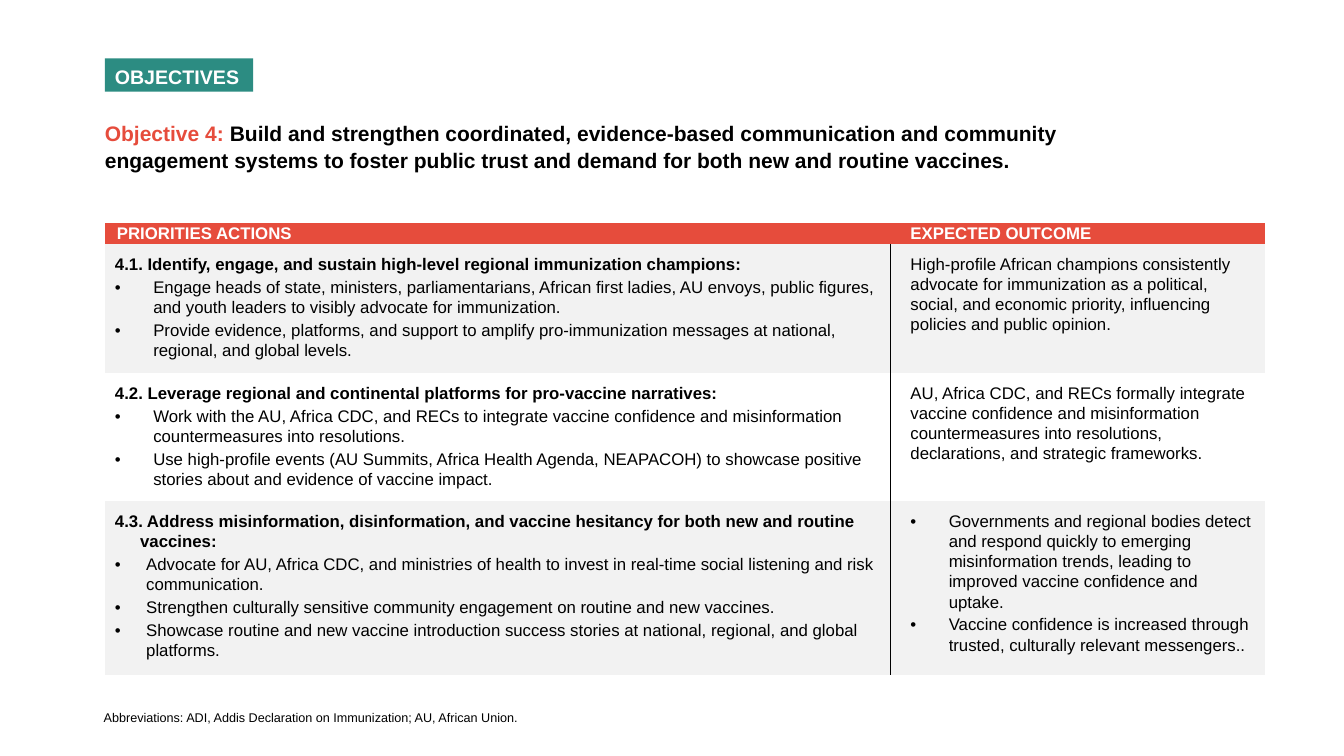
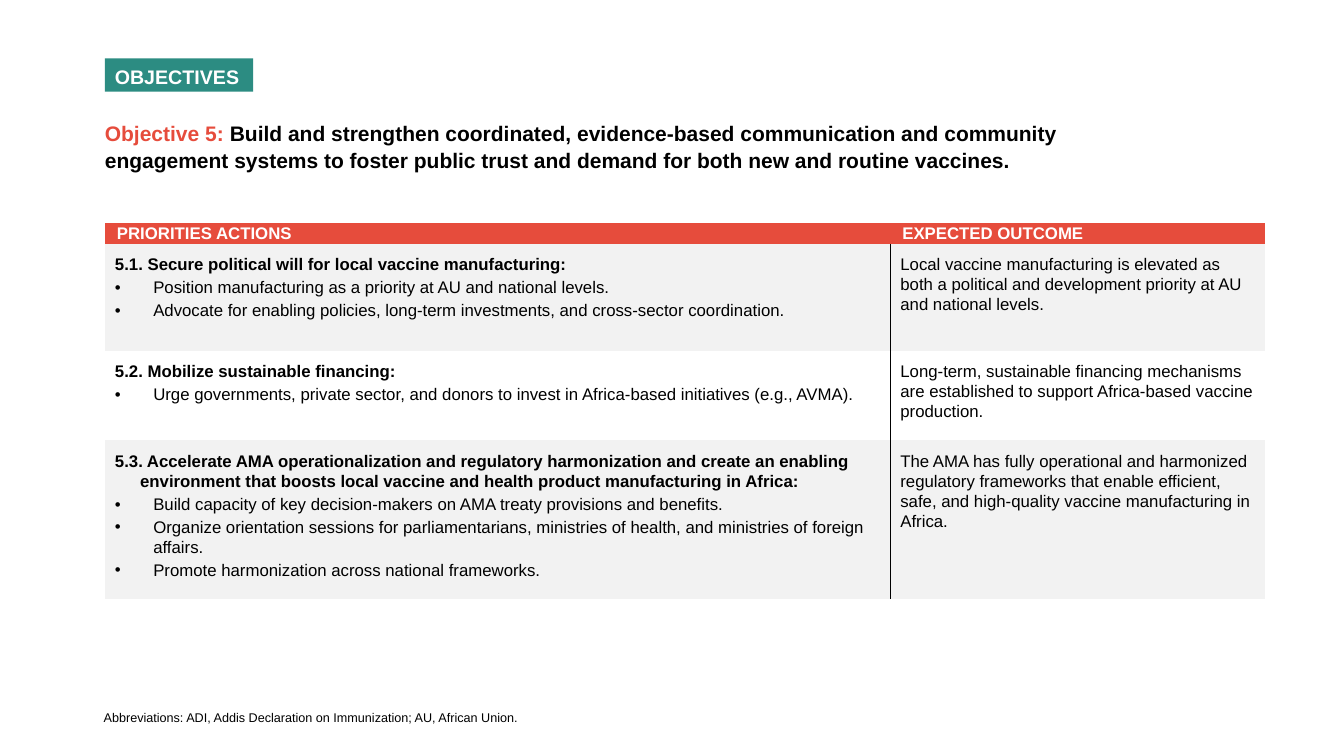
from dataclasses import dataclass

from lxml import etree
from pptx import Presentation
from pptx.dml.color import RGBColor
from pptx.enum.shapes import MSO_SHAPE
from pptx.enum.text import MSO_ANCHOR, MSO_AUTO_SIZE, PP_ALIGN
from pptx.oxml.ns import qn
from pptx.util import Inches, Pt

RECTANGLE = MSO_SHAPE.RECTANGLE
TOP = MSO_ANCHOR.TOP
MIDDLE = MSO_ANCHOR.MIDDLE
LEFT = PP_ALIGN.LEFT
NO_AUTOFIT = MSO_AUTO_SIZE.NONE

FONT = "Arial"
TEAL = "2C8C82"
RED = "E64C3C"
GREY = "F2F2F2"
WHITE = "FFFFFF"
BLACK = "000000"

MARGIN = 1.04
COLUMN_WIDTHS = (7.79, 3.72)
HEADER_HEIGHT = 0.21
LINE_SPACING = 1.07
HEADERS = ("PRIORITIES ACTIONS", "EXPECTED OUTCOME")
GOAL = (
    "Build and strengthen coordinated, evidence-based communication and community "
    "engagement systems to foster public trust and demand for both new and routine vaccines."
)
ABBREVIATIONS = "Abbreviations: ADI, Addis Declaration on Immunization; AU, African Union."


@dataclass
class Priority:
    height: float
    heading: str
    actions: list
    outcomes: list
    action_indent: float = 0.38


@dataclass
class Objective:
    label: str
    priorities: list
    header_inset: float
    outcome_inset: float


OBJECTIVES = [
    Objective(
        "Objective 4: ",
        [
            Priority(
                1.28,
                "4.1. Identify, engage, and sustain high-level regional immunization champions:",
                [
                    "Engage heads of state, ministers, parliamentarians, African first ladies, AU envoys, "
                    "public figures, and youth leaders to visibly advocate for immunization.",
                    "Provide evidence, platforms, and support to amplify pro-immunization messages "
                    "at national, regional, and global levels.",
                ],
                [
                    "High-profile African champions consistently advocate for immunization as a political, "
                    "social, and economic priority, influencing policies and public opinion.",
                ],
            ),
            Priority(
                1.27,
                "4.2. Leverage regional and continental platforms for pro-vaccine narratives:",
                [
                    "Work with the AU, Africa CDC, and RECs to integrate vaccine confidence and "
                    "misinformation countermeasures into resolutions.",
                    "Use high-profile events (AU Summits, Africa Health Agenda, NEAPACOH) to showcase "
                    "positive stories about and evidence of vaccine impact.",
                ],
                [
                    "AU, Africa CDC, and RECs formally integrate vaccine confidence and misinformation "
                    "countermeasures into resolutions, declarations, and strategic frameworks.",
                ],
            ),
            Priority(
                1.73,
                "4.3. Address misinformation, disinformation, and vaccine hesitancy for both new "
                "and routine vaccines:",
                [
                    "Advocate for AU, Africa CDC, and ministries of health to invest in real-time "
                    "social listening and risk communication.",
                    "Strengthen culturally sensitive community engagement on routine and new vaccines.",
                    "Showcase routine and new vaccine introduction success stories at national, "
                    "regional, and global platforms.",
                ],
                [
                    "Governments and regional bodies detect and respond quickly to emerging "
                    "misinformation trends, leading to improved vaccine confidence and uptake.",
                    "Vaccine confidence is increased through trusted, culturally relevant messengers..",
                ],
                action_indent=0.31,
            ),
        ],
        header_inset=0.2,
        outcome_inset=0.2,
    ),
    Objective(
        "Objective 5: ",
        [
            Priority(
                1.06,
                "5.1. Secure political will for local vaccine manufacturing:",
                [
                    "Position manufacturing as a priority at AU and national levels.",
                    "Advocate for enabling policies, long-term investments, and cross-sector coordination.",
                ],
                [
                    "Local vaccine manufacturing is elevated as both a political and development "
                    "priority at AU and national levels.",
                ],
            ),
            Priority(
                0.89,
                "5.2. Mobilize sustainable financing:",
                [
                    "Urge governments, private sector, and donors to invest in Africa-based "
                    "initiatives (e.g., AVMA).",
                ],
                [
                    "Long-term, sustainable financing mechanisms are established to support "
                    "Africa-based vaccine production.",
                ],
            ),
            Priority(
                1.57,
                "5.3. Accelerate AMA operationalization and regulatory harmonization and create an "
                "enabling environment that boosts local vaccine and health product manufacturing in Africa:",
                [
                    "Build capacity of key decision-makers on AMA treaty provisions and benefits.",
                    "Organize orientation sessions for parliamentarians, ministries of health, "
                    "and ministries of foreign affairs.",
                    "Promote harmonization across national frameworks.",
                ],
                [
                    "The AMA has fully operational and harmonized regulatory frameworks that enable "
                    "efficient, safe, and high-quality vaccine manufacturing in Africa.",
                ],
            ),
        ],
        header_inset=0.12,
        outcome_inset=0.1,
    ),
]


def rgb(color):
    return RGBColor.from_string(color)


def add_span(para, text, size, color, bold):
    span = para.add_run()
    span.text = text
    span.font.name = FONT
    span.font.size = Pt(size)
    span.font.bold = bold
    span.font.color.rgb = rgb(color)


def write_para(frame, text, size=12, color=BLACK, bold=False, lead="", lead_color=RED,
               hang=0, bullet=False, gap=0, spacing=LINE_SPACING):
    first = not frame.paragraphs[0].runs
    para = frame.paragraphs[0] if first else frame.add_paragraph()
    properties = para._p.get_or_add_pPr()
    if hang:
        properties.set("marL", str(Inches(hang)))
        properties.set("indent", str(-Inches(hang)))
    if bullet:
        etree.SubElement(properties, qn("a:buFont")).set("typeface", FONT)
        etree.SubElement(properties, qn("a:buChar")).set("char", "•")
    para.alignment = LEFT
    para.line_spacing = spacing
    para.space_before = Pt(0 if first else gap)
    para.space_after = Pt(gap)
    if lead:
        add_span(para, lead, size, lead_color, bold)
    add_span(para, text, size, color, bold)


def add_title(page, label):
    title = page.shapes.title
    title.left, title.top = Inches(MARGIN), Inches(1.13)
    title.width, title.height = Inches(10.5), Inches(0.62)
    frame = title.text_frame
    frame.word_wrap = True
    frame.auto_size = NO_AUTOFIT
    frame.vertical_anchor = TOP
    frame.margin_left = 0
    write_para(frame, GOAL, size=15, bold=True, lead=label)


def add_tag(page, text):
    tag = page.shapes.add_shape(RECTANGLE, Inches(MARGIN), Inches(0.58), Inches(1.47), Inches(0.33))
    tag.shadow.inherit = False
    tag.fill.solid()
    tag.fill.fore_color.rgb = rgb(TEAL)
    tag.line.fill.background()
    tag.text_frame.word_wrap = True
    tag.text_frame.vertical_anchor = TOP
    write_para(tag.text_frame, text, size=14, color=WHITE, bold=True)


def add_footnote(page, text):
    box = page.shapes.add_textbox(Inches(0.93), Inches(6.99), Inches(8.64), Inches(0.25))
    box.text_frame.word_wrap = True
    write_para(box.text_frame, text, size=9, spacing=1.0)


def set_borders(cell, ruled_side=None):
    properties = cell._tc.get_or_add_tcPr()
    for side in ("lnL", "lnR", "lnT", "lnB"):
        line = etree.SubElement(properties, qn(f"a:{side}"))
        if side == ruled_side:
            line.set("w", str(Pt(0.25)))
            fill = etree.SubElement(line, qn("a:solidFill"))
            etree.SubElement(fill, qn("a:srgbClr")).set("val", BLACK)
        else:
            etree.SubElement(line, qn("a:noFill"))


def style_cell(cell, fill, left, right=0.1, top=0.1, bottom=0.05, anchor=TOP, ruled_side=None):
    set_borders(cell, ruled_side)
    cell.fill.solid()
    cell.fill.fore_color.rgb = rgb(fill)
    cell.margin_left, cell.margin_right = Inches(left), Inches(right)
    cell.margin_top, cell.margin_bottom = Inches(top), Inches(bottom)
    cell.vertical_anchor = anchor


def fill_priority(table, row, priority, outcome_inset):
    table.rows[row].height = Inches(priority.height)
    shade = GREY if row % 2 else WHITE
    action_cell, outcome_cell = table.cell(row, 0), table.cell(row, 1)
    style_cell(action_cell, shade, 0.1, ruled_side="lnR")
    style_cell(outcome_cell, shade, outcome_inset, ruled_side="lnL")
    write_para(action_cell.text_frame, priority.heading, bold=True, hang=0.25, gap=1)
    for action in priority.actions:
        write_para(action_cell.text_frame, action, hang=priority.action_indent, bullet=True, gap=1)
    listed = len(priority.outcomes) > 1
    for outcome in priority.outcomes:
        write_para(outcome_cell.text_frame, outcome, hang=0.38 if listed else 0, bullet=listed, gap=1)


def add_priority_table(page, objective):
    priorities = objective.priorities
    height = HEADER_HEIGHT + sum(priority.height for priority in priorities)
    table = page.shapes.add_table(
        len(priorities) + 1, len(HEADERS),
        Inches(MARGIN), Inches(2.21), Inches(sum(COLUMN_WIDTHS)), Inches(height),
    ).table
    table.first_row = False
    table.horz_banding = False
    table.rows[0].height = Inches(HEADER_HEIGHT)
    insets = (0.12, objective.header_inset)
    for index, (header, width, inset) in enumerate(zip(HEADERS, COLUMN_WIDTHS, insets)):
        table.columns[index].width = Inches(width)
        cell = table.cell(0, index)
        style_cell(cell, RED, inset, right=0.06, top=0, bottom=0, anchor=MIDDLE)
        write_para(cell.text_frame, header, color=WHITE, bold=True)
    for row, priority in enumerate(priorities, start=1):
        fill_priority(table, row, priority, objective.outcome_inset)


def main():
    deck = Presentation()
    deck.slide_width, deck.slide_height = Inches(13.33), Inches(7.5)
    title_only = deck.slide_layouts[5]
    for objective in OBJECTIVES:
        page = deck.slides.add_slide(title_only)
        add_priority_table(page, objective)
        add_title(page, objective.label)
        add_tag(page, "OBJECTIVES")
        add_footnote(page, ABBREVIATIONS)
    deck.save("out.pptx")


if __name__ == "__main__":
    main()
